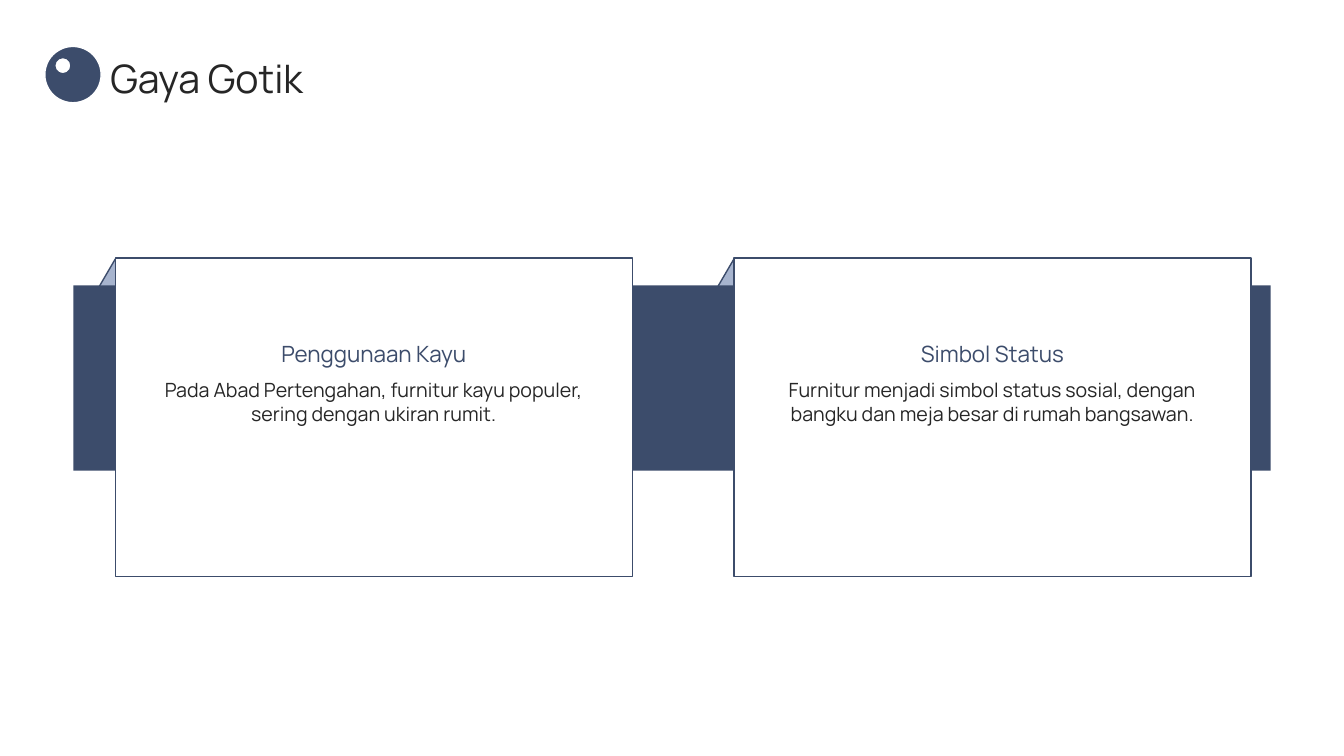
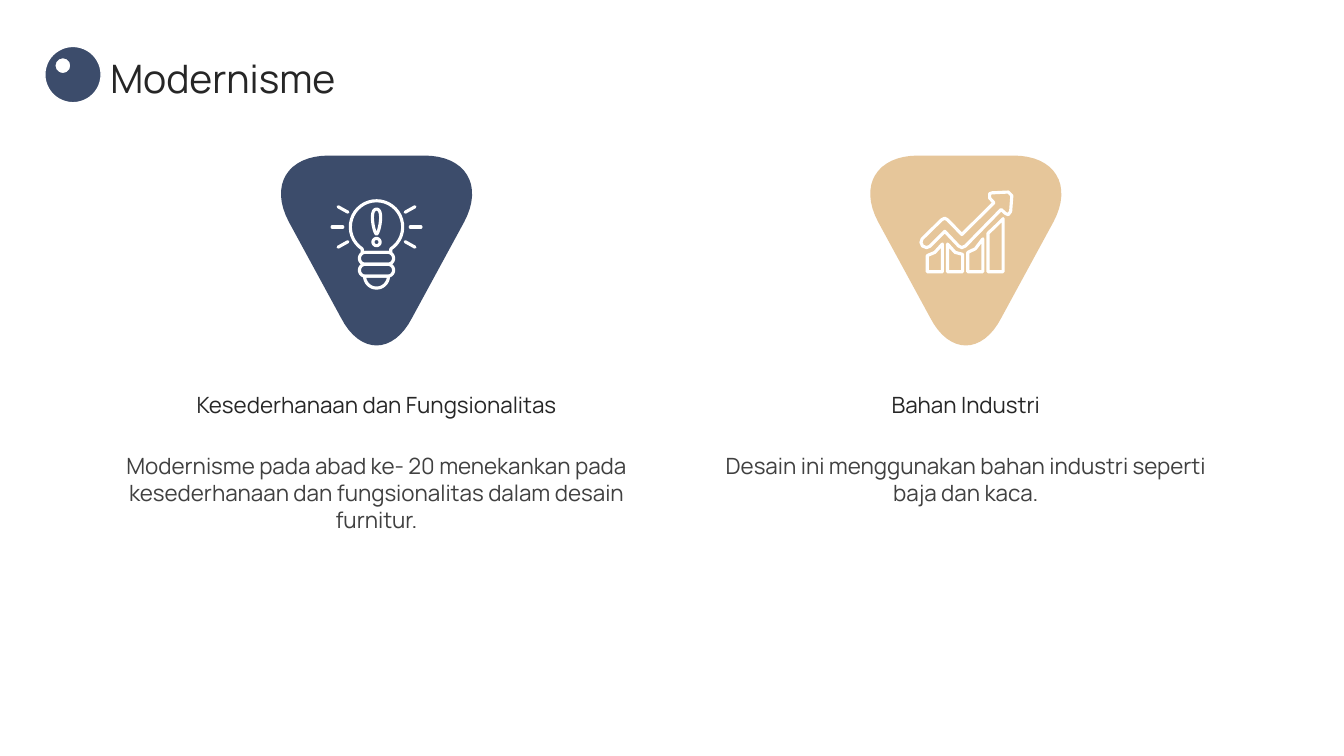
from math import cos, radians, sin

from pptx import Presentation
from pptx.dml.color import RGBColor
from pptx.enum.shapes import MSO_SHAPE as Shape
from pptx.enum.text import MSO_ANCHOR as Anchor, PP_ALIGN as Align
from pptx.util import Cm, Pt

NAVY, PALE_BLUE, SAND, WHITE = "3C4C6B", "A7B4CE", "E6C69A", "FFFFFF"
INK, GREY = "262626", "404040"
FONT = "Manrope"
ICON_STROKE = 2.25


def rgb(code):
    return RGBColor.from_string(code)


def curve(start, pull_a, pull_b, end, steps=16):
    """Points along a cubic Bezier curve."""
    points = []
    for i in range(steps + 1):
        t = i / steps
        weights = ((1 - t) ** 3, 3 * t * (1 - t) ** 2, 3 * t * t * (1 - t), t ** 3)
        corners = (start, pull_a, pull_b, end)
        points.append(tuple(sum(w * c[axis] for w, c in zip(weights, corners))
                            for axis in (0, 1)))
    return points


def arc(x, y, radius, first, last, steps=32):
    """Points along a circle; angles in degrees, clockwise from the right."""
    angles = [radians(first + (last - first) * i / steps) for i in range(steps + 1)]
    return [(x + radius * cos(a), y + radius * sin(a)) for a in angles]


class Deck:
    """Holds the shared style and the current slide; lengths are in cm."""

    def __init__(self):
        self.file = Presentation()
        self.file.slide_width, self.file.slide_height = Cm(33.87), Cm(19.05)
        self.slide = None

    def new_slide(self, title):
        self.slide = self.file.slides.add_slide(self.file.slide_layouts[6])
        self.text(title, 2.78, 1.3, 30.18, 1.3, 28, INK, Anchor.MIDDLE, Align.LEFT)
        self.shape(Shape.OVAL, 1.13, 1.17, 1.42, 1.42, NAVY, WHITE)
        self.shape(Shape.OVAL, 1.38, 1.45, 0.41, 0.41, WHITE, NAVY)

    def paint(self, shape, fill, line, width):
        shape.shadow.inherit = False
        if fill:
            shape.fill.solid()
            shape.fill.fore_color.rgb = rgb(fill)
        else:
            shape.fill.background()
        if line:
            shape.line.color.rgb = rgb(line)
            shape.line.width = Pt(width)
        else:
            shape.line.fill.background()

    def shape(self, kind, x, y, w, h, fill, line=None):
        shape = self.slide.shapes.add_shape(kind, Cm(x), Cm(y), Cm(w), Cm(h))
        self.paint(shape, fill, line, 1)

    def outline(self, center, contours, fill=None, line=None, width=1):
        """One freeform of closed contours, placed around a vertical axis."""
        builder = None
        for contour in contours:
            start, *rest = [(Cm(center + dx), Cm(y)) for dx, y in contour]
            if builder is None:
                builder = self.slide.shapes.build_freeform(*start)
            else:
                builder.move_to(*start)
            builder.add_line_segments(rest, close=True)
        self.paint(builder.convert_to_shape(), fill, line, width)

    def text(self, words, x, y, w, h, size, color,
             anchor=Anchor.TOP, align=Align.CENTER):
        frame = self.slide.shapes.add_textbox(Cm(x), Cm(y), Cm(w), Cm(h)).text_frame
        frame.word_wrap = True
        frame.vertical_anchor = anchor
        frame.margin_left = frame.margin_right = 0
        frame.margin_top = frame.margin_bottom = 0
        paragraph = frame.paragraphs[0]
        paragraph.text = words
        paragraph.alignment = align
        paragraph.font.name = FONT
        paragraph.font.size = Pt(size)
        paragraph.font.color.rgb = rgb(color)

    def card(self, x, heading, body):
        self.shape(Shape.RECTANGLE, x, 6.5, 13.03, 8.03, WHITE, NAVY)
        self.text(body, x + 0.53, 9.53, 11.96, 4.67, 14, INK)
        self.text(heading, x + 0.53, 7.26, 11.96, 2, 16, NAVY, Anchor.BOTTOM)

    def badge(self, center, color):
        """Triangle with rounded corners, pointing down."""
        right = curve((1.2, 3.92), (2.25, 3.92), (2.7, 4.67), (2.21, 5.59))
        tip = curve((0.9, 8), (0.42, 8.94), (-0.42, 8.94), (-0.9, 8))
        left = [(-x, y) for x, y in reversed(right)]
        self.outline(center, [right + tip + left], color)

    def icon(self, center, contours):
        self.outline(center, contours, line=WHITE, width=ICON_STROKE)

    def topic(self, center, color, icon, heading, body):
        self.badge(center, color)
        self.icon(center, icon)
        left = center - 6.55
        self.text(heading, left, 8.99, 13.1, 2.4, 16, INK, Anchor.MIDDLE)
        self.text(body, left, 11.4, 13.1, 4.93, 16, GREY)


def bulb_icon():
    # Glass and tip
    contours = [[(0.36, 6.36)] + arc(0, 5.72, 0.66, 57, -237) + [(-0.36, 6.36)],
                arc(0, 6.96, 0.3, 0, 180)]
    # Screw rings
    for y in (6.51, 6.81):
        contours.append(arc(0.28, y, 0.15, -90, 90) + arc(-0.28, y, 0.15, 90, 270))
    # Exclamation mark
    contours.append(curve((0, 5.9), (-0.06, 5.9), (-0.2, 5.27), (0, 5.27))
                    + curve((0, 5.27), (0.2, 5.27), (0.06, 5.9), (0, 5.9)))
    contours.append(arc(0, 6.1, 0.09, 0, 360))
    # Rays
    for side in (-1, 1):
        for near, far, y, rise in ((0.72, 0.97, 5.35, -0.14),
                                   (0.85, 1.12, 5.72, 0),
                                   (0.72, 0.97, 6.09, 0.14)):
            contours.append([(side * near, y), (side * far, y + rise)])
    return contours


def growth_icon():
    # Rising arrow
    contours = [[(-1.1, 6.02), (-0.61, 5.54), (-0.53, 5.5), (-0.46, 5.54),
                 (-0.1, 5.91), (0.71, 5.11), (0.6, 4.99), (0.6, 4.88),
                 (0.66, 4.86), (1.07, 4.84), (1.16, 4.93), (1.13, 5.33),
                 (1.07, 5.41), (1, 5.38), (0.89, 5.28), (-0.01, 6.2),
                 (-0.1, 6.24), (-0.18, 6.2), (-0.53, 5.83), (-0.91, 6.21),
                 (-0.99, 6.24), (-1.09, 6.2), (-1.13, 6.11)]]
    # Bars with slanted tops; the second and third have a bend
    tops = ([6.44, 6.36, 6.15], [6.15, 6.36, 6.41],
            [6.36, 6.27, 6.02], [5.88, 5.7, 5.51])
    for i, heights in enumerate(tops):
        left = -0.97 + 0.51 * i
        roof = [(left + 0.19 * step, y) for step, y in enumerate(heights)]
        contours.append([(left, 6.85)] + roof + [(left + 0.38, 6.85)])
    return contours


def main():
    deck = Deck()

    # Gothic style: two cards on a ribbon
    deck.new_slide("Gaya Gotik")
    cards = (
        (2.91, "Penggunaan Kayu",
         "Pada Abad Pertengahan, furnitur kayu populer, sering dengan ukiran rumit."),
        (18.5, "Simbol Status",
         "Furnitur menjadi simbol status sosial, dengan bangku dan meja besar "
         "di rumah bangsawan."),
    )
    for x, _, _ in cards:
        deck.shape(Shape.ISOSCELES_TRIANGLE, x - 0.6, 6.53, 1.19, 1.02,
                   PALE_BLUE, NAVY)
    deck.shape(Shape.RECTANGLE, 1.85, 7.19, 30.17, 4.67, NAVY)
    for card in cards:
        deck.card(*card)

    # Modernism: two topics with icons
    deck.new_slide("Modernisme")
    deck.topic(9.49, NAVY, bulb_icon(), "Kesederhanaan dan Fungsionalitas",
               "Modernisme pada abad ke- 20 menekankan pada kesederhanaan dan "
               "fungsionalitas dalam desain furnitur.")
    deck.topic(24.34, SAND, growth_icon(), "Bahan Industri",
               "Desain ini menggunakan bahan industri seperti baja dan kaca.")

    deck.file.save("out.pptx")


if __name__ == "__main__":
    main()
